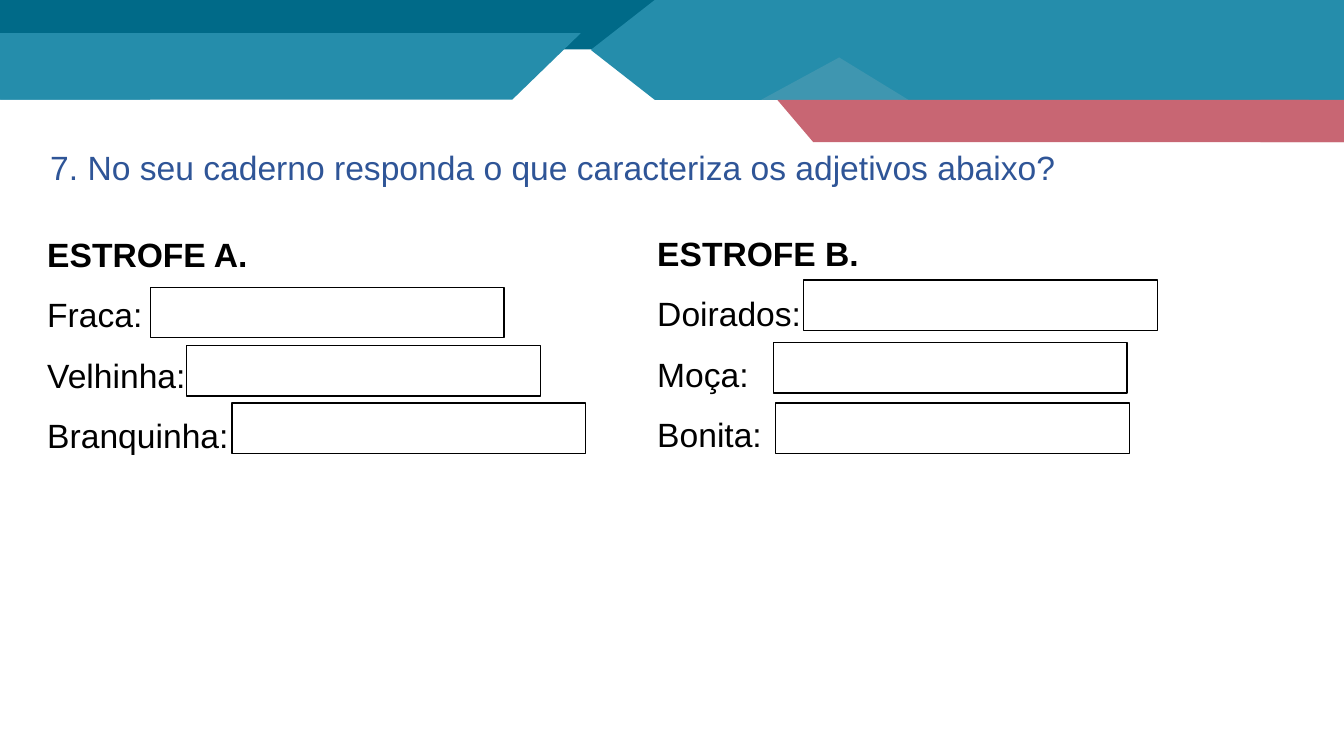
"""Build a slide with a banner and two lists of adjectives to fill in."""
from pptx import Presentation
from pptx.dml.color import RGBColor
from pptx.enum.shapes import MSO_SHAPE
from pptx.enum.text import MSO_AUTO_SIZE, PP_ALIGN
from pptx.util import Inches, Pt

SLANT, RECT = MSO_SHAPE.PARALLELOGRAM, MSO_SHAPE.RECTANGLE
PLATE, PEAK = MSO_SHAPE.PENTAGON, MSO_SHAPE.ISOSCELES_TRIANGLE
JUSTIFY, LEFT = PP_ALIGN.JUSTIFY, PP_ALIGN.LEFT
GROW = MSO_AUTO_SIZE.SHAPE_TO_FIT_TEXT

COLORS = {"dark": "006A88", "teal": "258DAB", "pale": "3F96B0", "rose": "C86673",
          "title": "2F5597", "black": "000000", "white": "FFFFFF"}
FONT, SIZE = "Arial", 24

BANNER = [
    (SLANT, (0, 0, 7.2, 0.49), "dark", 1.03, False),
    (RECT, (0, 0, 1.49, 0.49), "dark", None, False),
    (SLANT, (0, 0.33, 5.76, 0.66), "teal", 1.03, False),
    (RECT, (0, 0.33, 1.49, 0.66), "teal", None, False),
    (PLATE, (5.86, 0, 7.48, 0.99), "teal", 0.64, True),
    (PEAK, (7.55, 0.57, 1.46, 0.42), "pale", 0.53, False),
    (SLANT, (7.71, 0.99, 5.63, 0.42), "rose", 0.85, True),
    (RECT, (12.5, 0.99, 0.83, 0.42), "rose", None, False),
]
TITLE = "7. No seu caderno responda o que caracteriza os adjetivos abaixo?"
VERSES = [
    ("ESTROFE A.", ["Fraca:", "Velhinha:", "Branquinha:"],
     (0.37, 2.21, 2.45, 2.38), [(1.49, 2.85), (1.85, 3.43), (2.3, 4)]),
    ("ESTROFE B.", ["Doirados:", "Moça:", "Bonita:"],
     (6.42, 2.2, 2.22, 2.38), [(7.97, 2.78), (7.67, 3.4), (7.69, 4)]),
]
BLANK = (3.51, 0.5)


def paint(name):
    return RGBColor.from_string(COLORS[name])


def add_block(slide, kind, place, fill, line=None):
    block = slide.shapes.add_shape(kind, *map(Inches, place))
    block.shadow.inherit = False
    block.fill.solid()
    block.fill.fore_color.rgb = paint(fill)
    if line:
        block.line.color.rgb = paint(line)
        block.line.width = Pt(1)
    else:
        block.line.fill.background()
    return block


def add_text(slide, place, lines, color, align, wrap):
    frame = slide.shapes.add_textbox(*map(Inches, place)).text_frame
    frame.word_wrap = wrap
    frame.auto_size = GROW
    frame.text = "\n".join(lines)
    for para in frame.paragraphs:
        para.alignment = align
        font = para.runs[0].font
        font.name, font.size = FONT, Pt(SIZE)
        font.color.rgb = paint(color)
    return frame.paragraphs


def main():
    deck = Presentation()
    deck.slide_width, deck.slide_height = Inches(13.33), Inches(7.5)
    slide = deck.slides.add_slide(deck.slide_layouts[6])

    for kind, place, fill, bend, flip in BANNER:
        block = add_block(slide, kind, place, fill)
        if bend:
            block.adjustments[0] = bend
        if flip:
            block.element.spPr.xfrm.set("flipH", "1")

    add_text(slide, (0.4, 1.41, 10.56, 0.5), [TITLE], "title", LEFT, False)

    for head, words, place, blanks in VERSES:
        paras = add_text(slide, place, [head, *words], "black", JUSTIFY, True)
        for para in paras:
            para.line_spacing = 1.5
        paras[0].line_spacing = 1.15
        paras[0].runs[0].font.bold = True
        for spot in blanks:
            add_block(slide, RECT, spot + BLANK, "white", "black")

    deck.save("out.pptx")


if __name__ == "__main__":
    main()
